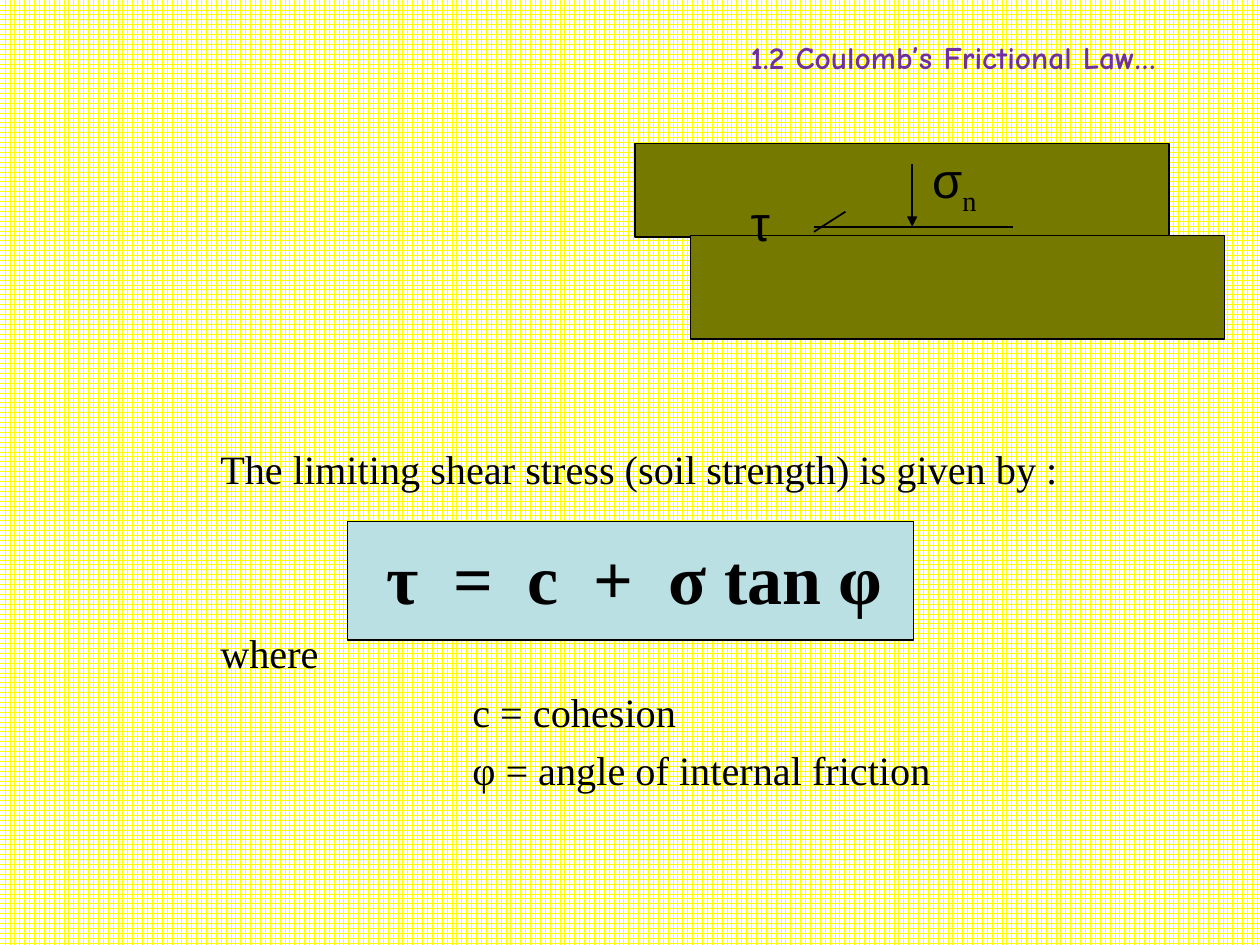
from dataclasses import dataclass

from lxml import etree
from pptx import Presentation
from pptx.dml.color import RGBColor
from pptx.enum.dml import MSO_PATTERN
from pptx.enum.shapes import MSO_CONNECTOR, MSO_SHAPE
from pptx.enum.text import PP_ALIGN
from pptx.oxml.ns import qn
from pptx.util import Inches, Pt

LARGE_GRID = MSO_PATTERN.LARGE_GRID
STRAIGHT = MSO_CONNECTOR.STRAIGHT
RECTANGLE = MSO_SHAPE.RECTANGLE
LEFT, CENTER = PP_ALIGN.LEFT, PP_ALIGN.CENTER


@dataclass(frozen=True)
class Theme:
    ink: RGBColor = RGBColor(0x00, 0x00, 0x00)
    paper: RGBColor = RGBColor(0xFF, 0xFF, 0xFF)
    grid: RGBColor = RGBColor(0xFF, 0xFF, 0x00)
    heading: RGBColor = RGBColor(0x70, 0x30, 0xA0)
    soil: RGBColor = RGBColor(0x76, 0x79, 0x00)
    panel: RGBColor = RGBColor(0xBB, 0xE0, 0xE3)
    heading_font: str = "Comic Neue"
    body_font: str = "Times New Roman"
    symbol_font: str = "Arial"
    heading_size: float = 18
    body_size: float = 23
    symbol_size: float = 28
    equation_size: float = 40


THEME = Theme()


def style_run(run, font, size, color=THEME.ink, bold=False):
    run.font.name = font
    run.font.size = Pt(size)
    run.font.color.rgb = color
    run.font.bold = bold


def add_text_frame(slide, left, top, width, height):
    box = slide.shapes.add_textbox(Inches(left), Inches(top), Inches(width), Inches(height))
    box.text_frame.word_wrap = True
    return box.text_frame


def add_block(slide, left, top, width, height, color, outline):
    block = slide.shapes.add_shape(
        RECTANGLE, Inches(left), Inches(top), Inches(width), Inches(height)
    )
    block.shadow.inherit = False
    block.fill.solid()
    block.fill.fore_color.rgb = color
    block.line.color.rgb = THEME.ink
    block.line.width = Pt(outline)


def add_stroke(slide, start, end, arrow=False):
    stroke = slide.shapes.add_connector(STRAIGHT, *(Inches(value) for value in start + end))
    stroke.line.color.rgb = THEME.ink
    stroke.line.width = Pt(1)
    if arrow:
        etree.SubElement(stroke.line._get_or_add_ln(), qn("a:tailEnd"), type="triangle")
    etree.SubElement(stroke._element.spPr, qn("a:effectLst"))


def add_symbol(slide, left, top, symbol, subscript=""):
    paragraph = add_text_frame(slide, left, top, 0.59, 0.56).paragraphs[0]
    paragraph.text = symbol
    style_run(paragraph.runs[0], THEME.symbol_font, THEME.symbol_size)
    if subscript:
        index = paragraph.add_run()
        index.text = subscript
        style_run(index, THEME.body_font, THEME.symbol_size)
        index.font._element.set("baseline", "-25000")


def add_strength_law(slide, left, top, width, height):
    add_block(slide, left + 2.41, top + 0.66, 4.49, 0.94, THEME.panel, 0.75)
    frame = add_text_frame(slide, left, top, width, height)
    outer, inner = 1.3, 3.3
    size = THEME.body_size
    lines = [
        ("The limiting shear stress (soil strength) is given by :", LEFT, outer, size, 5.6),
        ("τ  =  c  +  σ tan φ", CENTER, 0, THEME.equation_size, 24),
        ("where", LEFT, outer, size, 5.6),
        ("c = cohesion", LEFT, inner, size, 5.6),
        ("φ = angle of internal friction", LEFT, inner, size, 5.6),
    ]
    for number, (wording, alignment, indent, size, space) in enumerate(lines):
        paragraph = frame.add_paragraph() if number else frame.paragraphs[0]
        paragraph.text = wording
        paragraph.alignment = alignment
        paragraph.space_before = Pt(space)
        paragraph._p.get_or_add_pPr().set("marL", str(Inches(indent)))
        style_run(paragraph.runs[0], THEME.body_font, size, bold=alignment == CENTER)


def add_sliding_blocks(slide, left, top, width, height):
    block_width, upper_height, lower_height = 4.24, 0.74, 0.82
    contact = top + 0.66
    add_block(slide, left, top, block_width, upper_height, THEME.soil, 1)
    add_block(slide, left + width - block_width, top + height - lower_height,
              block_width, lower_height, THEME.soil, 1)
    add_stroke(slide, (left + 1.42, contact), (left + 3, contact))
    add_stroke(slide, (left + 1.42, contact + 0.04), (left + 1.67, contact - 0.12))
    add_symbol(slide, left + 0.82, top + 0.34, "τ")
    add_symbol(slide, left + 2.26, top, "σ", "n")
    add_stroke(slide, (left + 2.2, top + 0.16), (left + 2.2, contact), arrow=True)


def add_heading(slide, left, top, width, height):
    frame = add_text_frame(slide, left, top, width, height)
    frame.text = "1.2 Coulomb’s Frictional Law…"
    style_run(frame.paragraphs[0].runs[0], THEME.heading_font, THEME.heading_size,
              THEME.heading, bold=True)


def paint_background(slide):
    fill = slide.background.fill
    fill.patterned()
    fill.pattern = LARGE_GRID
    fill.fore_color.rgb = THEME.grid
    fill.back_color.rgb = THEME.paper


def main():
    presentation = Presentation()
    presentation.slide_width = Inches(10)
    presentation.slide_height = Inches(7.5)
    slide = presentation.slides.add_slide(presentation.slide_layouts[6])
    paint_background(slide)
    add_strength_law(slide, 0.35, 3.48, 9.37, 3.58)
    add_sliding_blocks(slide, 5.04, 1.14, 4.68, 1.55)
    add_heading(slide, 5.86, 0.25, 4.12, 0.4)
    presentation.save("out.pptx")


if __name__ == "__main__":
    main()
